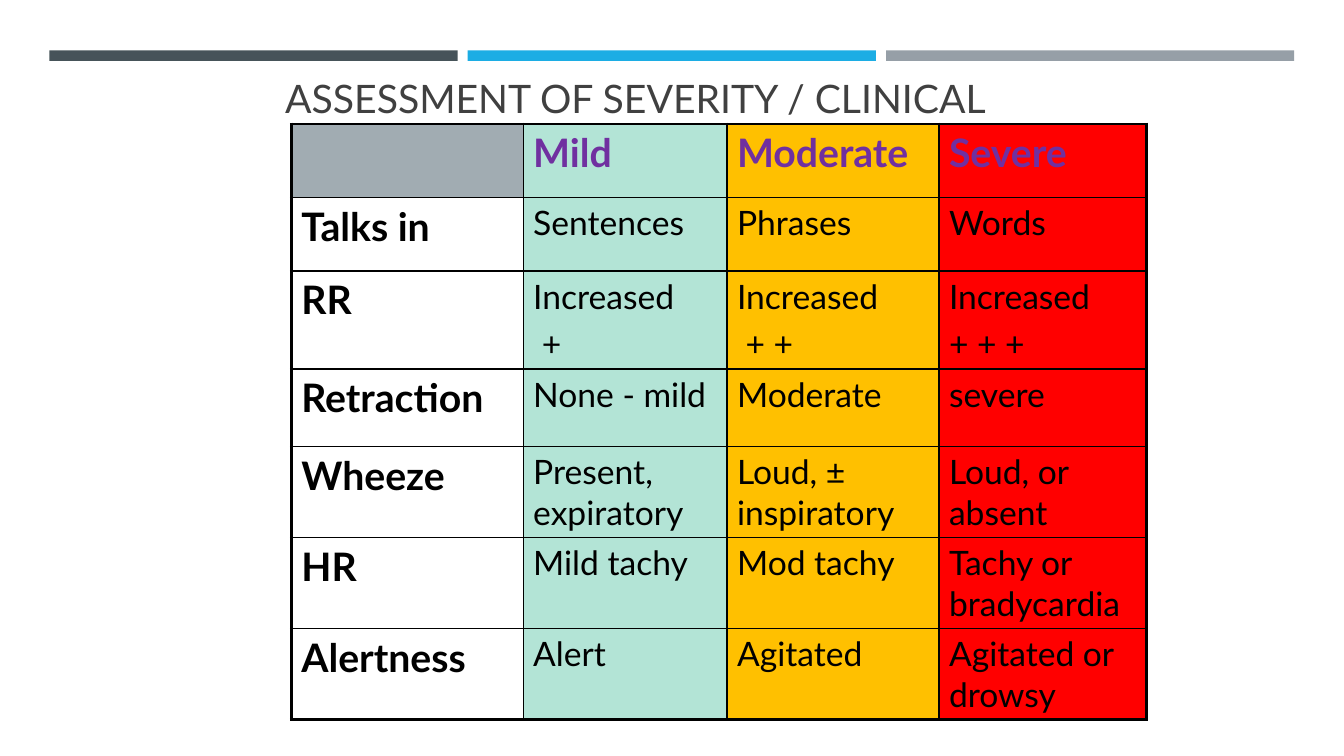
from pptx import Presentation
from pptx.dml.color import RGBColor
from pptx.enum.shapes import MSO_SHAPE
from pptx.enum.text import MSO_ANCHOR
from pptx.oxml import parse_xml
from pptx.oxml.ns import nsdecls
from pptx.util import Pt

COLORS = {
    "slate": "465359", "blue": "1CADE4", "silver": "969FA7",
    "title": "404040", "heading": "7030A0", "black": "000000",
    "corner": "A1ACB2", "mild": "B3E4D6", "moderate": "FFC000", "severe": "FF0000",
}
FONT = "Lato"
TITLE = "ASSESSMENT OF SEVERITY / CLINICAL"
STRIPES = ["slate", "blue", "silver"]
SEVERITY = [
    ("", "Mild", "Moderate", "Severe"),
    ("Talks in", "Sentences", "Phrases", "Words"),
    ("RR", "Increased\n +", "Increased\n + +", "Increased\n+ + +"),
    ("Retraction", "None - mild", "Moderate", "severe"),
    ("Wheeze", "Present, expiratory", "Loud, ± inspiratory", "Loud, or absent"),
    ("HR", "Mild tachy", "Mod tachy", "Tachy or bradycardia"),
    ("Alertness", "Alert", "Agitated", "Agitated or drowsy"),
]
COLUMN_FILLS = [None, "mild", "moderate", "severe"]
COLUMN_WIDTHS = [165.6, 145.6, 151.4, 148.4]
ROW_HEIGHTS = [52.5, 52.5, 70, 55.5, 65, 65, 65]


def rgb(name):
    return RGBColor.from_string(COLORS[name])


def style_text(frame, size, color, bold=False):
    for index, para in enumerate(frame.paragraphs):
        if index:
            para.space_before = Pt(size * 0.2)
        para.font.size = Pt(size)
        for span in para.runs:
            span.font.name = FONT
            span.font.size = Pt(size)
            span.font.bold = bold
            span.font.color.rgb = rgb(color)


def add_stripes(page):
    left, width, pitch = 35.3, 291.6, 298.8
    for index, color in enumerate(STRIPES):
        stripe = page.shapes.add_shape(
            MSO_SHAPE.RECTANGLE, Pt(left + index * pitch), Pt(36), Pt(width), Pt(7.5))
        stripe.shadow.inherit = False
        stripe.fill.solid()
        stripe.fill.fore_color.rgb = rgb(color)
        stripe.line.fill.background()


def add_title(page):
    box = page.shapes.add_textbox(Pt(196.6), Pt(0), Pt(677.5), Pt(90))
    frame = box.text_frame
    frame.word_wrap = True
    frame.vertical_anchor = MSO_ANCHOR.BOTTOM
    frame.text = TITLE
    style_text(frame, 28, "title")


def set_borders(cell, outer_sides):
    """Draw all four edges, heavier on the sides that lie on the table's outline."""
    properties = cell._tc.get_or_add_tcPr()
    for index, side in enumerate("LRTB"):
        width = Pt(2.25 if side in outer_sides else 1)
        properties.insert(index, parse_xml(
            f'<a:ln{side} {nsdecls("a")} w="{width}"><a:solidFill>'
            f'<a:srgbClr val="{COLORS["black"]}"/></a:solidFill></a:ln{side}>'))


def add_severity_table(page):
    last_row, last_column = len(ROW_HEIGHTS) - 1, len(COLUMN_WIDTHS) - 1
    table = page.shapes.add_table(
        last_row + 1, last_column + 1, Pt(208.1), Pt(88.6),
        Pt(sum(COLUMN_WIDTHS)), Pt(sum(ROW_HEIGHTS))).table
    table.horz_banding = False
    table.first_row = False
    for column, width in zip(table.columns, COLUMN_WIDTHS):
        column.width = Pt(width)
    for row, height in zip(table.rows, ROW_HEIGHTS):
        row.height = Pt(height)

    for r, texts in enumerate(SEVERITY):
        for c, text in enumerate(texts):
            cell = table.cell(r, c)
            cell.text_frame.text = text
            is_label = r == 0 or c == 0
            style_text(cell.text_frame, 28 if is_label else 24,
                       "heading" if r == 0 else "black", is_label)
            fill = "corner" if r == c == 0 else COLUMN_FILLS[c]
            if fill:
                cell.fill.solid()
                cell.fill.fore_color.rgb = rgb(fill)
            else:
                cell.fill.background()
            edges = {"L": c == 0, "R": c == last_column, "T": r == 0, "B": r == last_row}
            set_borders(cell, [side for side, outer in edges.items() if outer])


def main():
    deck = Presentation()
    deck.slide_width, deck.slide_height = Pt(960), Pt(540)
    page = deck.slides.add_slide(deck.slide_layouts[6])
    add_stripes(page)
    add_title(page)
    add_severity_table(page)
    deck.save("out.pptx")


if __name__ == "__main__":
    main()
